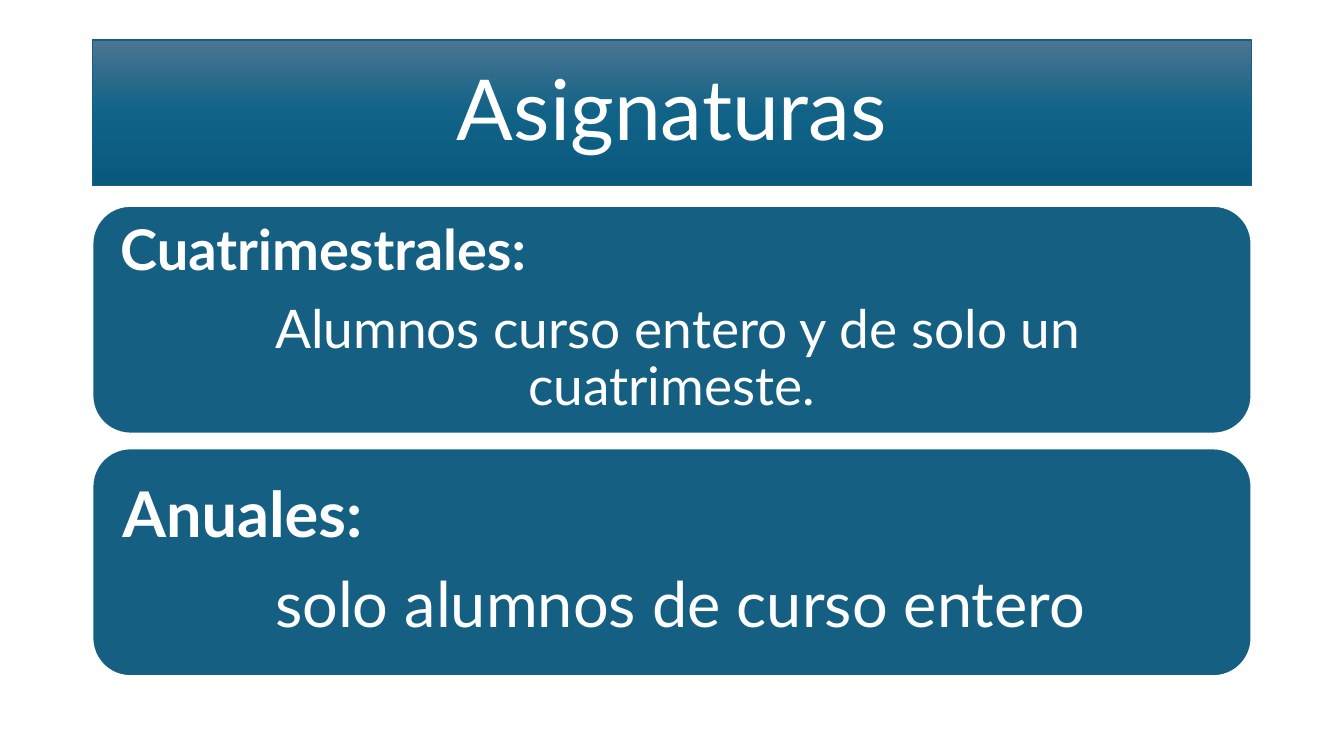
import copy

import pptx
import pptx.dml.color
import pptx.enum.shapes
import pptx.enum.text
import pptx.util

RGBColor = pptx.dml.color.RGBColor
WHITE = RGBColor(0xFF, 0xFF, 0xFF)
TEAL = RGBColor(0x15, 0x60, 0x82)
BANNER_STOPS = (
    (0, RGBColor(0x4C, 0x75, 0x91)),
    (0.5, RGBColor(0x10, 0x62, 0x87)),
    (1, RGBColor(0x09, 0x59, 0x7D)),
)
LEFT = pptx.enum.text.PP_ALIGN.LEFT
CENTER = pptx.enum.text.PP_ALIGN.CENTER
EMU_PER_PX = 9525


def px(length):
    return pptx.util.Emu(length * EMU_PER_PX)


def write(paragraph, text, *, font, size, color=WHITE, bold=False, align=LEFT, after=0):
    paragraph.alignment = align
    paragraph.line_spacing = 0.9
    paragraph.space_before = pptx.util.Pt(0)
    paragraph.space_after = pptx.util.Pt(after)
    run = paragraph.add_run()
    run.text = text
    run.font.name = font
    run.font.size = pptx.util.Pt(size)
    run.font.bold = bold
    run.font.color.rgb = color


class SubjectSlide:
    font = "Lato"
    left = 88
    width = 1104

    def __init__(self, presentation):
        self.slide = presentation.slides.add_slide(presentation.slide_layouts[5])

    def prepare_frame(self, frame):
        frame.word_wrap = True
        frame.auto_size = pptx.enum.text.MSO_AUTO_SIZE.NONE
        frame.vertical_anchor = pptx.enum.text.MSO_ANCHOR.MIDDLE

    def outline(self, shape, color, weight):
        shape.line.color.rgb = color
        shape.line.width = pptx.util.Pt(weight)

    def banner(self, text, top, height):
        title = self.slide.shapes.title
        title.left, title.top = px(self.left), px(top)
        title.width, title.height = px(self.width), px(height)
        title.fill.gradient()
        title.fill.gradient_angle = 270
        first_stop = title.fill.gradient_stops[0]._gs
        first_stop.addnext(copy.deepcopy(first_stop))
        for stop, (position, color) in zip(title.fill.gradient_stops, BANNER_STOPS):
            stop.position = position
            stop.color.rgb = color
        self.outline(title, TEAL, 1)
        self.prepare_frame(title.text_frame)
        write(title.text_frame.paragraphs[0], text, font=self.font, size=60, align=CENTER)

    def panel(self, heading, detail, top, height, heading_size, detail_size, inset):
        card = self.slide.shapes.add_shape(
            pptx.enum.shapes.MSO_SHAPE.ROUNDED_RECTANGLE,
            px(self.left), px(top), px(self.width), px(height),
        )
        card.shadow.inherit = False
        card.fill.solid()
        card.fill.fore_color.rgb = TEAL
        self.outline(card, WHITE, 1.5)
        frame = card.text_frame
        self.prepare_frame(frame)
        frame.margin_left = frame.margin_right = px(inset)
        frame.margin_top = frame.margin_bottom = px(inset)
        after = round(heading_size * 0.35)
        write(frame.paragraphs[0], heading, font=self.font, size=heading_size,
              bold=True, after=after)
        write(frame.add_paragraph(), detail, font=self.font, size=detail_size,
              align=CENTER, after=after)


def main():
    presentation = pptx.Presentation()
    presentation.slide_width, presentation.slide_height = px(1280), px(720)
    subjects = SubjectSlide(presentation)
    subjects.banner("Asignaturas", top=38, height=139)
    panels = (
        ("Cuatrimestrales:", " Alumnos curso entero y de solo un cuatrimeste.", 40, 38, 16),
        ("Anuales:", " solo alumnos de curso entero", 45, 45, 18),
    )
    panel_height, gap = 217, 14
    for row, (heading, detail, heading_size, detail_size, inset) in enumerate(panels):
        subjects.panel(heading, detail, 196 + row * (panel_height + gap), panel_height,
                       heading_size, detail_size, inset)
    presentation.save("out.pptx")


if __name__ == "__main__":
    main()
